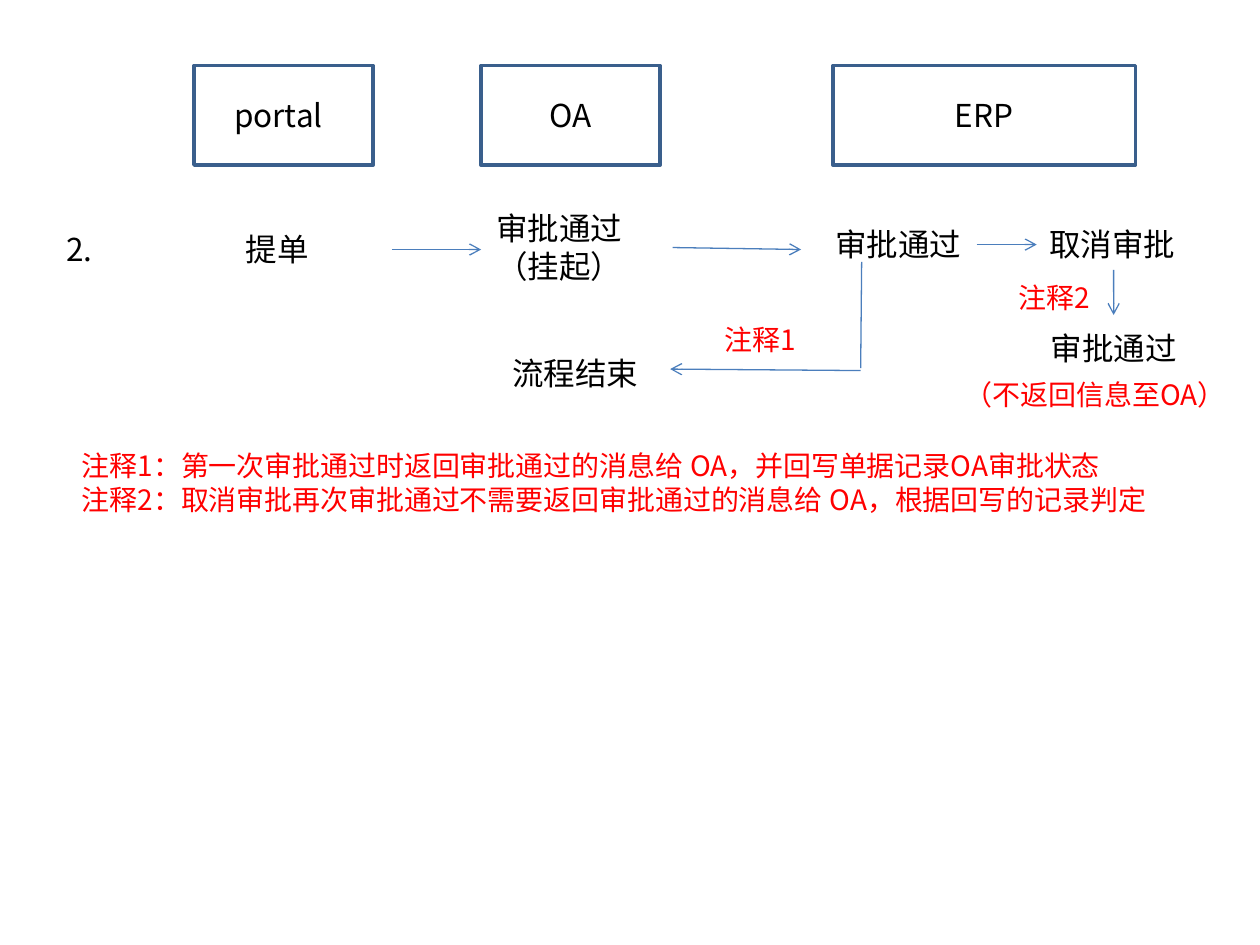
import pptx
import pptx.dml.color
import pptx.enum.shapes
import pptx.enum.text
import pptx.oxml
import pptx.oxml.ns
import pptx.util
from pptx.util import Cm

FONT = "Noto Sans CJK SC"
COLORS = {"paper": "FFFFFF", "border": "3A5F8C", "arrow": "4B7EBC",
          "text": "000000", "note": "FF0000"}
STYLES = {
    "step": {"size": pptx.util.Pt(18), "color": "text"},
    "note": {"size": pptx.util.Pt(16), "color": "note"},
}
BOX_TOP, BOX_HEIGHT = 1.32, 2.01
BOX_FRAME = {"word_wrap": True, "vertical_anchor": pptx.enum.text.MSO_ANCHOR.MIDDLE}
TEXT_FRAME = {"word_wrap": True, "auto_size": pptx.enum.text.MSO_AUTO_SIZE.SHAPE_TO_FIT_TEXT}

# System, left, width, right inset (cm)
SYSTEMS = [("portal", 3.91, 3.61, 0.45), ("OA", 9.7, 3.61, 0.25), ("ERP", 16.79, 6.1, 0.25)]

# Name: lines, style, left, top, width, height (cm)
TEXTS = {
    "number": (["2."], "step", 1.09, 4.52, 2.21, 1.02),
    "submit": (["提单"], "step", 4.7, 4.52, 2.01, 1.02),
    "oa approval": (["审批通过（挂起）"], "step", 9.75, 4.09, 3.81, 1.8),
    "erp approval": (["审批通过"], "step", 16.59, 4.42, 3.1, 1.02),
    "cancel": (["取消审批"], "step", 20.9, 4.42, 3.1, 1.02),
    "second approval": (["审批通过"], "step", 20.93, 6.5, 3.1, 1.02),
    "end": (["流程结束"], "step", 10.08, 7.01, 3.4, 1.02),
    "no return": (["（不返回信息至OA）"], "note", 19.2, 7.49, 6.48, 0.94),
    "note 1 mark": (["注释1"], "note", 14.35, 6.38, 2.74, 0.94),
    "note 2 mark": (["注释2"], "note", 20.29, 5.54, 2.18, 0.94),
    "notes": (["注释1：第一次审批通过时返回审批通过的消息给 OA，并回写单据记录OA审批状态",
               "注释2：取消审批再次审批通过不需要返回审批通过的消息给 OA，根据回写的记录判定"],
              "note", 1.4, 8.92, 23.8, 1.63),
}

# Start, end, has arrowhead; an end is a point (cm) or a (text name, side) pair
BOTTOM, LEFT, RIGHT = 2, 1, 3
FLOWS = [
    ((7.9, 5.03), (9.7, 5.03), True),
    (("oa approval", RIGHT), (16.15, 5.03), True),
    (("erp approval", RIGHT), ("cancel", LEFT), True),
    (("cancel", BOTTOM), (22.45, 6.35), True),
    ((17.37, 5.28), (17.35, 7.42), False),
    ((17.35, 7.47), (13.51, 7.44), True),
]


def rgb(name):
    return pptx.dml.color.RGBColor.from_string(COLORS[name])


def set_values(target, values):
    for name, value in values.items():
        setattr(target, name, value)


def write_lines(frame, lines, style, alignment):
    for index, line in enumerate(lines):
        paragraph = frame.add_paragraph() if index else frame.paragraphs[0]
        paragraph.alignment = alignment
        run = paragraph.add_run()
        run.text = line
        set_values(run.font, {"name": FONT, "size": STYLES[style]["size"]})
        run.font.color.rgb = rgb(STYLES[style]["color"])
        east_asian = pptx.oxml.parse_xml(
            f'<a:ea {pptx.oxml.ns.nsdecls("a")} typeface="{FONT}"/>')
        run.font._element.find(pptx.oxml.ns.qn("a:latin")).addnext(east_asian)


def add_system(slide, name, left, width, right_inset):
    shape = slide.shapes.add_shape(pptx.enum.shapes.MSO_SHAPE.RECTANGLE,
                                   Cm(left), Cm(BOX_TOP), Cm(width), Cm(BOX_HEIGHT))
    shape.shadow.inherit = False
    shape.fill.solid()
    shape.fill.fore_color.rgb = rgb("paper")
    shape.line.color.rgb = rgb("border")
    shape.line.width = pptx.util.Pt(2)
    set_values(shape.text_frame, {**BOX_FRAME, "margin_right": Cm(right_inset)})
    write_lines(shape.text_frame, [name], "step", pptx.enum.text.PP_ALIGN.CENTER)


def add_text(slide, lines, style, *box):
    shape = slide.shapes.add_textbox(*map(Cm, box))
    set_values(shape.text_frame, TEXT_FRAME)
    write_lines(shape.text_frame, lines, style, pptx.enum.text.PP_ALIGN.LEFT)
    return shape


def add_flow(slide, texts, start, end, has_arrowhead):
    points = [(0, 0) if place[0] in texts else place for place in (start, end)]
    connector = slide.shapes.add_connector(
        pptx.enum.shapes.MSO_CONNECTOR.STRAIGHT,
        *(Cm(value) for point in points for value in point))
    for place, connect in ((start, connector.begin_connect), (end, connector.end_connect)):
        if place[0] in texts:
            connect(texts[place[0]], place[1])
    connector.line.color.rgb = rgb("arrow")
    connector.line.width = pptx.util.Pt(0.75)
    namespace = pptx.oxml.ns.nsdecls("a")
    if has_arrowhead:
        connector.line._get_or_add_ln().append(
            pptx.oxml.parse_xml(f'<a:tailEnd {namespace} type="arrow"/>'))
    connector._element.spPr.append(pptx.oxml.parse_xml(f"<a:effectLst {namespace}/>"))


def main():
    presentation = pptx.Presentation()
    set_values(presentation, {"slide_width": Cm(25.4), "slide_height": Cm(19.05)})
    slide = presentation.slides.add_slide(presentation.slide_layouts[6])
    for system in SYSTEMS:
        add_system(slide, *system)
    texts = {name: add_text(slide, *text) for name, text in TEXTS.items()}
    for flow in FLOWS:
        add_flow(slide, texts, *flow)
    presentation.save("out.pptx")


if __name__ == "__main__":
    main()
